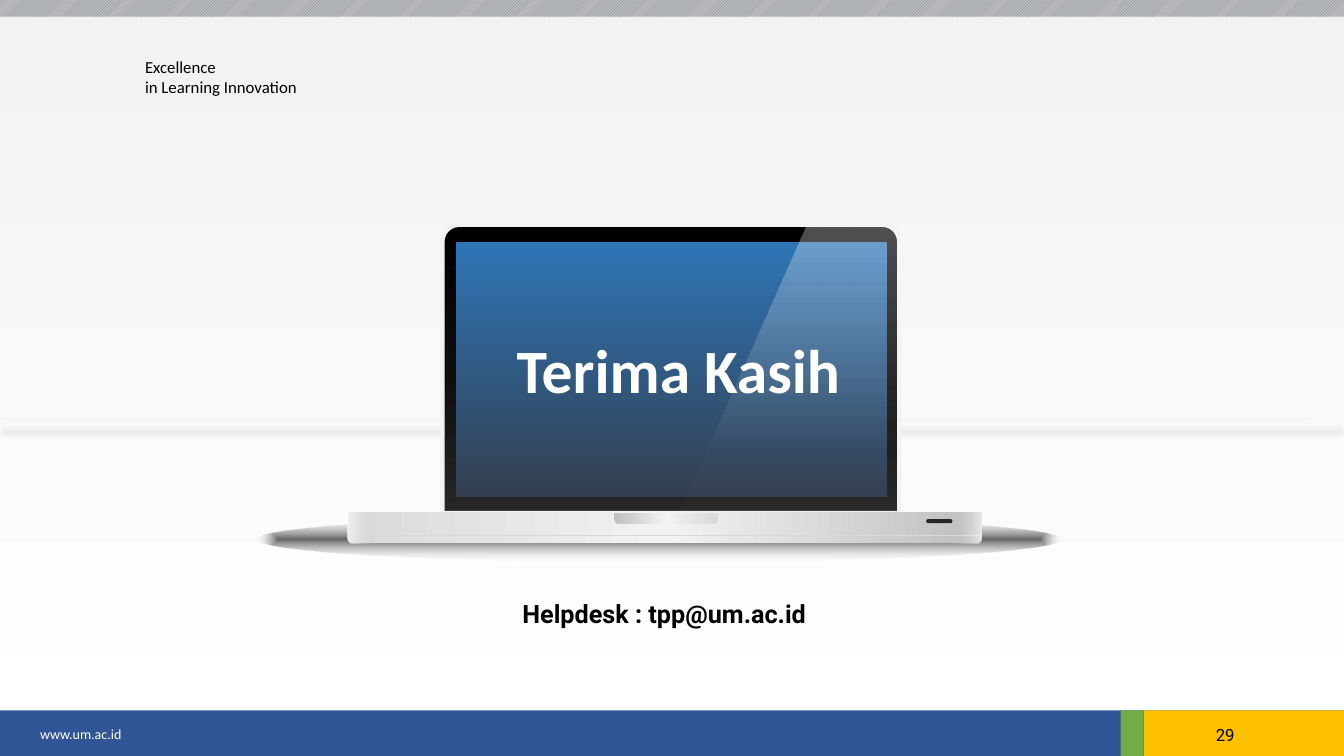
from math import cos, pi, sin

from lxml.etree import SubElement
from pptx import Presentation
from pptx.dml.color import RGBColor
from pptx.enum.dml import MSO_PATTERN
from pptx.enum.shapes import MSO_CONNECTOR, MSO_SHAPE
from pptx.enum.text import MSO_ANCHOR, MSO_AUTO_SIZE, PP_ALIGN
from pptx.oxml.ns import qn
from pptx.util import Pt

BLACK = RGBColor(0x00, 0x00, 0x00)
NEAR_BLACK = RGBColor(0x0D, 0x0D, 0x0D)
CHARCOAL = RGBColor(0x26, 0x26, 0x26)
WHITE = RGBColor(0xFF, 0xFF, 0xFF)
PALE = RGBColor(0xF2, 0xF2, 0xF2)
LIGHT = RGBColor(0xD9, 0xD9, 0xD9)
SILVER = RGBColor(0xD4, 0xD4, 0xD4)
GREY = RGBColor(0xBF, 0xBF, 0xBF)
SLATE = RGBColor(0x68, 0x74, 0x8B)
NAVY = RGBColor(0x2F, 0x55, 0x97)
AMBER = RGBColor(0xFF, 0xC0, 0x00)
GREEN = RGBColor(0x70, 0xAD, 0x47)
SKY = RGBColor(0x2E, 0x75, 0xB6)
DUSK = RGBColor(0x33, 0x3F, 0x50)
METAL = [(0, GREY), (50, PALE), (100, LIGHT)]
SHEEN = [(0, WHITE, 64), (100, SILVER, 0)]
W, H = 960, 540


def add_color(parent, color, alpha=100):
    """Add an RGB colour with its opacity in percent."""
    clr = SubElement(parent, qn("a:srgbClr"), val=str(color))
    if alpha < 100:
        SubElement(clr, qn("a:alpha"), val=str(alpha * 1000))


def gradient(sp, stops, angle=None):
    """Fill a shape with a linear gradient, or a centred one without an angle."""
    sp.fill.background()
    spPr = sp._element.spPr
    old = spPr.find(qn("a:noFill"))
    grad = SubElement(spPr, qn("a:gradFill"), rotWithShape="1")
    gs_lst = SubElement(grad, qn("a:gsLst"))
    for pos, *color in stops:
        add_color(SubElement(gs_lst, qn("a:gs"), pos=str(pos * 1000)), *color)
    if angle is None:
        path = SubElement(grad, qn("a:path"), path="shape")
        SubElement(path, qn("a:fillToRect"), l="50000", t="50000", r="50000", b="50000")
    else:
        SubElement(grad, qn("a:lin"), ang=str(angle * 60000), scaled="0")
    spPr.replace(old, grad)


def add_box(shapes, kind, x, y, w, h, fill=None, adj=()):
    """Add a preset shape without outline or shadow."""
    sp = shapes.add_shape(kind, Pt(x), Pt(y), Pt(w), Pt(h))
    sp.shadow.inherit = False
    sp.line.fill.background()
    for i, value in enumerate(adj):
        sp.adjustments[i] = value
    if fill is not None:
        sp.fill.solid()
        sp.fill.fore_color.rgb = fill
    return sp


def add_rule(shapes, x, y, w, color, width, shadow, alpha, **shadow_attrs):
    """Add a horizontal line with an outer shadow."""
    ln = shapes.add_connector(MSO_CONNECTOR.STRAIGHT, Pt(x), Pt(y), Pt(x + w), Pt(y))
    ln.line.color.rgb = color
    ln.line.width = Pt(width)
    effects = SubElement(ln._element.spPr, qn("a:effectLst"))
    outer = SubElement(effects, qn("a:outerShdw"), dir="5400000", rotWithShape="0", **shadow_attrs)
    add_color(outer, shadow, alpha)


def write(sp, text, size, font, color, bold=False, align=PP_ALIGN.LEFT, anchor=MSO_ANCHOR.TOP):
    """Set and format the text of a box."""
    tf = sp.text_frame
    tf.text = text
    tf.word_wrap = True
    tf.auto_size = MSO_AUTO_SIZE.NONE
    tf.vertical_anchor = anchor
    for p in tf.paragraphs:
        p.alignment = align
        for r in p.runs:
            r.font.size = Pt(size)
            r.font.name = font
            r.font.bold = bold
            r.font.color.rgb = color


def add_text(s, x, y, w, h, *args, **kwargs):
    """Add a formatted text box."""
    write(s.shapes.add_textbox(Pt(x), Pt(y), Pt(w), Pt(h)), *args, **kwargs)


def add_backdrop(s, x, y, w, h):
    """Draw the pale background, the horizon line and the hatched top strip."""
    wall = add_box(s.shapes, MSO_SHAPE.RECTANGLE, x, y, w, h)
    gradient(wall, [(1, PALE), (100, WHITE)], 90)
    add_rule(s.shapes, x + 0.7, y + 299.5, w - 24, PALE, 1, BLACK, 16,
             blurRad=str(Pt(4)), dist=str(Pt(8.5)), sx="102300", algn="l")
    strip = add_box(s.shapes, MSO_SHAPE.RECTANGLE, x, y, w, 12)
    strip.fill.patterned()
    strip.fill.pattern = MSO_PATTERN.LIGHT_UPWARD_DIAGONAL
    strip.fill.fore_color.rgb = SLATE
    strip.fill.back_color.rgb = GREY


def add_footer(s, x, y, w, h):
    """Draw the footer bar with the web address and the page number."""
    for dx, bw, color in ((0, w, NAVY), (817, w - 817, AMBER), (800.5, 16.5, GREEN)):
        add_box(s.shapes, MSO_SHAPE.RECTANGLE, x + dx, y, bw, h, color)
    add_text(s, x + 21.6, y - 8, 487, 34, "www.um.ac.id", 10, "Calibri", WHITE,
             anchor=MSO_ANCHOR.BOTTOM)
    add_text(s, x + 727, y + 6.5, 162, 25, "29", 12, "Roboto", BLACK, align=PP_ALIGN.RIGHT)


def add_glare(shapes, x, y, w, h):
    """Draw the slanted reflection with its rounded top right corner."""
    rx, ry = 12.9, 12.2
    arc = [(x + w - rx + rx * sin(i * pi / 16), y + ry - ry * cos(i * pi / 16)) for i in range(9)]
    outline = arc + [(x + w, y + h), (x, y + h - 1.4)]
    fb = shapes.build_freeform(round((x + 90.7) * 100), round(y * 100), scale=Pt(1) / 100)
    fb.add_line_segments([(px * 100, py * 100) for px, py in outline], close=True)
    sp = fb.convert_to_shape()
    sp.shadow.inherit = False
    sp.line.fill.background()
    gradient(sp, [(21, WHITE, 1), (100, WHITE, 32)], 270)


def add_laptop(s, x, y, w, h):
    """Draw the laptop as one group standing on its shadow."""
    shapes = s.shapes.add_group_shape().shapes
    base_x, base_y, base_w = x + 64.8, y + 205.2, 453
    floor = add_box(shapes, MSO_SHAPE.OVAL, x, y + h - 31.7, w, 31.7)
    gradient(floor, [(0, BLACK, 59), (100, LIGHT, 0)])
    foot = add_box(shapes, MSO_SHAPE.ROUNDED_RECTANGLE, base_x, base_y + 13, base_w, 9.4, adj=[0.5])
    gradient(foot, METAL, 180)
    lid = add_box(shapes, MSO_SHAPE.ROUND_2_SAME_RECTANGLE, x + 132.5, y, 326.2, 205.9,
                  adj=[0.058, 0])
    gradient(lid, [(0, BLACK), (50, NEAR_BLACK), (100, CHARCOAL)], 90)
    lid.line.color.rgb = PALE
    lid.line.width = Pt(3)
    screen = add_box(shapes, MSO_SHAPE.RECTANGLE, x + 141.8, y + 12.2, 308.2, 182.2)
    gradient(screen, [(0, SKY), (100, DUSK)], 90)
    base = add_box(shapes, MSO_SHAPE.RECTANGLE, base_x, base_y, base_w, 16.6)
    gradient(base, METAL, 180)
    add_rule(shapes, base_x, base_y + 16.6, base_w, LIGHT, 0.25, GREY, 64,
             blurRad=str(Pt(1)), dist="0")
    add_box(shapes, MSO_SHAPE.ROUNDED_RECTANGLE, x + 478, y + 210.2, 18.7, 2.9, CHARCOAL, [0.5])
    for corner_x, mirrored in ((base_x + base_w - 20, True), (base_x, False)):
        corner = add_box(shapes, MSO_SHAPE.ROUND_1_RECTANGLE, corner_x, base_y, 20, 22.3,
                         adj=[0.213])
        gradient(corner, SHEEN, 180)
        corner.rotation = 180
        if mirrored:
            corner._element.spPr.xfrm.set("flipH", "1")
    notch = add_box(shapes, MSO_SHAPE.ROUND_2_SAME_RECTANGLE, x + 254.9, y + 205.9, 74.2, 7.9,
                    adj=[0.5, 0])
    gradient(notch, METAL, 180)
    notch.rotation = 180
    add_glare(shapes, x + 301.7, y, 158.3, 205.9)


def place_title(s, x, y, w, h):
    """Place the title on the laptop screen, in front of the drawing."""
    title = s.shapes.title
    title.left, title.top, title.width, title.height = Pt(x), Pt(y), Pt(w), Pt(h)
    write(title, "Terima Kasih", 44, "Calibri", WHITE, bold=True, align=PP_ALIGN.CENTER)
    tf = title.text_frame
    tf.margin_left = tf.margin_right = Pt(9.4)
    tf.margin_top = tf.margin_bottom = Pt(5)
    s.shapes._spTree.append(title._element)


def add_closing_slide(prs):
    """Build the thank-you slide."""
    s = prs.slides.add_slide(prs.slide_layouts[5])
    add_backdrop(s, 0, 0, W, H)
    add_footer(s, 0, 507.5, W, 32.5)
    add_text(s, 96.5, 36.7, 348, 36, "Excellence\nin Learning Innovation", 12, "Calibri", BLACK)
    add_laptop(s, 183.6, 160.6, 574.5, 240.5)
    place_title(s, 316, 232, 337.5, 63.5)
    add_text(s, 268.5, 424, 412, 29, "Helpdesk : tpp@um.ac.id", 18, "Roboto", BLACK,
             bold=True, align=PP_ALIGN.CENTER)


def main():
    """Create and save the presentation."""
    prs = Presentation()
    prs.slide_width, prs.slide_height = Pt(W), Pt(H)
    add_closing_slide(prs)
    prs.save("out.pptx")


if __name__ == "__main__":
    main()
